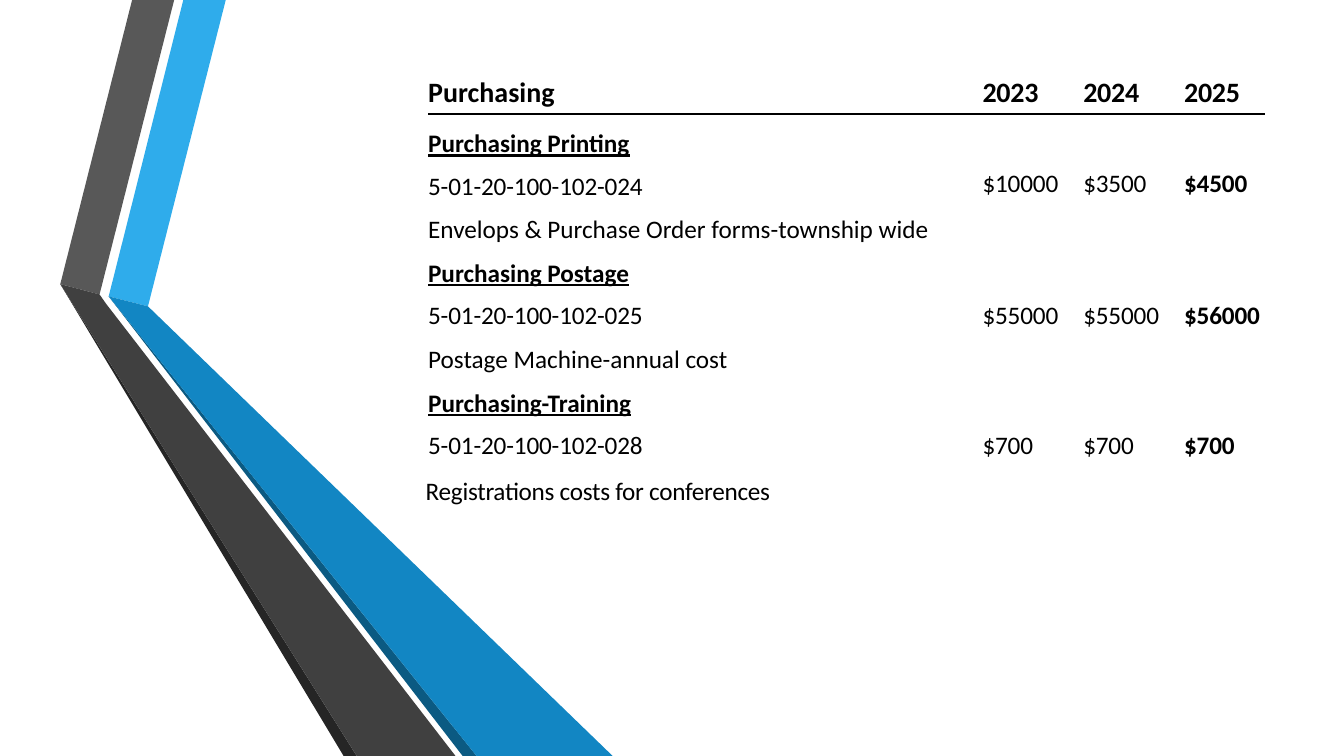
from dataclasses import dataclass

from lxml import etree
from pptx import Presentation
from pptx.dml.color import RGBColor
from pptx.enum.text import MSO_ANCHOR, MSO_AUTO_SIZE, PP_ALIGN
from pptx.oxml.ns import qn
from pptx.util import Cm, Pt

TOP = MSO_ANCHOR.TOP
LEFT = PP_ALIGN.LEFT
NO_AUTOFIT = MSO_AUTO_SIZE.NONE
TITLE_ONLY = 5
FONT = "Calibri"
BODY_SIZE = 18
HEADER_SIZE = 20
SLIDE_HEIGHT = 19.05
PLAIN_TABLE_STYLE = "{2D5ABB26-0587-4C30-8999-92F81FD0307C}"
COLORS = {
    "text": "000000",
    "sky": "2FACEB",
    "grey": "585858",
    "black": "252525",
    "navy": "0B5A82",
    "blue": "1286C3",
    "charcoal": "404040",
}


@dataclass
class Band:
    color: str
    points: list[tuple[float, float]]


@dataclass
class Row:
    height: float
    labels: list[str]
    amounts: list[str]
    kind: str = "item"  # "header", "heading" or "item"
    line_points: float | None = None
    label_top: float = 0
    amount_top: float = 0


@dataclass
class Budget:
    left: float
    top: float
    widths: list[float]
    indents: list[float]
    rows: list[Row]


@dataclass
class Label:
    text: str
    box: tuple[float, float, float, float]
    heading: bool = False
    tracking: int = 0


BANDS = [
    Band("sky", [(5.69, 0), (4.62, 0), (2.74, 7.47), (3.73, 7.72)]),
    Band("grey", [(4.39, 0), (3.33, 0), (1.52, 7.16), (2.51, 7.42)]),
    Band("black", [(1.52, 7.16), (8.66, SLIDE_HEIGHT), (8.99, SLIDE_HEIGHT)]),
    Band("navy", [(2.74, 7.47), (11.66, SLIDE_HEIGHT), (12.01, SLIDE_HEIGHT)]),
    Band("blue", [(2.74, 7.47), (12.01, SLIDE_HEIGHT), (15.44, SLIDE_HEIGHT), (3.73, 7.72)]),
    Band("charcoal", [(1.52, 7.16), (8.99, SLIDE_HEIGHT), (11.48, SLIDE_HEIGHT),
                      (2.67, 7.65), (2.51, 7.42)]),
]

BUDGETS = [
    Budget(10.79, 2.17, [9.73, 6.48, 2.54, 2.33], [0, 4.24, 0.3, 0.3], [
        Row(0.71, ["Purchasing"], ["2023", "2024", "2025"], "header", 16.9),
        Row(2.18, ["Purchasing Printing", "5-01-20-100-102-024"], ["$10000", "$3500", "$4500"],
            "heading", 21.5, label_top=0.38, amount_top=1.38),
    ]),
    Budget(10.69, 7.75, [10.16, 6.15, 2.54, 2.34], [0.1, 3.91, 0.3, 0.3], [
        Row(0.86, ["5-01-20-100-102-025"], ["$55000", "$55000", "$56000"], line_points=17.1),
        Row(1.09, ["Postage Machine-annual cost"], [], label_top=0.08),
        Row(1.09, ["Purchasing-Training"], [], "heading", label_top=0.08),
        Row(0.86, ["5-01-20-100-102-028"], ["$700", "$700", "$700"],
            line_points=21.5, label_top=0.08, amount_top=0.08),
    ]),
]

TITLE = Label("Envelops & Purchase Order forms-township wide", (10.76, 5.34, 15.09, 0.81))
LABELS = [
    Label("Purchasing Postage", (10.76, 6.45, 5.33, 0.81), heading=True),
    Label("Registrations costs for conferences", (10.7, 11.94, 16.41, 0.84), tracking=-20),
]


def style_text(para, size: int, bold: bool, underline: bool, tracking: int) -> None:
    para.alignment = LEFT
    font = para.font
    font.name = FONT
    font.size = Pt(size)
    font.bold = bold
    font.underline = underline
    font.color.rgb = RGBColor.from_string(COLORS["text"])
    if tracking:
        for span in para.runs:
            span._r.get_or_add_rPr().set("spc", str(tracking))


def add_band(page, band: Band) -> None:
    points = [(round(x * 100), round(y * 100)) for x, y in band.points]
    builder = page.shapes.build_freeform(*points[0], scale=Cm(1) / 100)
    builder.add_line_segments(points[1:], close=True)
    shape = builder.convert_to_shape()
    shape.shadow.inherit = False
    shape.fill.solid()
    shape.fill.fore_color.rgb = RGBColor.from_string(COLORS[band.color])
    shape.line.fill.background()


def set_bottom_border(cell) -> None:
    line = etree.Element(qn("a:lnB"), w=str(Pt(1.5)))
    fill = etree.SubElement(line, qn("a:solidFill"))
    etree.SubElement(fill, qn("a:srgbClr"), val=COLORS["text"])
    cell._tc.get_or_add_tcPr().insert(0, line)


def fill_cell(cell, row: Row, column: int, indent: float) -> None:
    cell.fill.background()
    cell.vertical_anchor = TOP
    cell.margin_left = Cm(indent)
    cell.margin_right = cell.margin_bottom = Cm(0)
    cell.margin_top = Cm(row.amount_top if column else row.label_top)
    texts = row.amounts[column - 1:column] if column else row.labels
    header = row.kind == "header"
    for index, text in enumerate(texts):
        para = cell.text_frame.add_paragraph() if index else cell.text_frame.paragraphs[0]
        para.text = text
        if index:
            para.space_before = Pt(9.4)
        if row.line_points:
            para.line_spacing = Pt(row.line_points)
        heading = row.kind == "heading" and column == 0 and index == 0
        tracking = -10 if text.startswith("5-01") else 0
        style_text(para, HEADER_SIZE if header else BODY_SIZE,
                   header or heading or column == 3, heading, tracking or (-20 if header and column else 0))
        if column and not header:
            style_text(para, BODY_SIZE, column == 3, False, -10)


def add_budget(page, budget: Budget) -> None:
    heights = [row.height for row in budget.rows]
    frame = page.shapes.add_table(len(heights), len(budget.widths), Cm(budget.left),
                                  Cm(budget.top), Cm(sum(budget.widths)), Cm(sum(heights)))
    table = frame.table
    table.first_row = table.horz_banding = False
    table._tbl.tblPr.find(qn("a:tableStyleId")).text = PLAIN_TABLE_STYLE
    for column, width in enumerate(budget.widths):
        table.columns[column].width = Cm(width)
    for index, row in enumerate(budget.rows):
        table.rows[index].height = Cm(row.height)
        for column, indent in enumerate(budget.indents):
            cell = table.cell(index, column)
            fill_cell(cell, row, column, indent)
            if row.kind == "header":
                set_bottom_border(cell)


def fill_label(box, label: Label) -> None:
    box.left, box.top, box.width, box.height = (Cm(length) for length in label.box)
    frame = box.text_frame
    frame.word_wrap = True
    frame.auto_size = NO_AUTOFIT
    frame.vertical_anchor = TOP
    frame.margin_left = frame.margin_top = Cm(0.03)
    frame.margin_right = frame.margin_bottom = Cm(0)
    para = frame.paragraphs[0]
    para.text = label.text
    style_text(para, BODY_SIZE, label.heading, label.heading, label.tracking)


def main() -> None:
    deck = Presentation()
    deck.slide_width, deck.slide_height = Cm(33.87), Cm(SLIDE_HEIGHT)
    page = deck.slides.add_slide(deck.slide_layouts[TITLE_ONLY])

    # Folded ribbons on the left
    for band in BANDS:
        add_band(page, band)

    # Budget lines
    for budget in BUDGETS:
        add_budget(page, budget)

    # Title and the labels around the tables
    fill_label(page.shapes.title, TITLE)
    for label in LABELS:
        fill_label(page.shapes.add_textbox(0, 0, 0, 0), label)

    deck.save("out.pptx")


if __name__ == "__main__":
    main()
